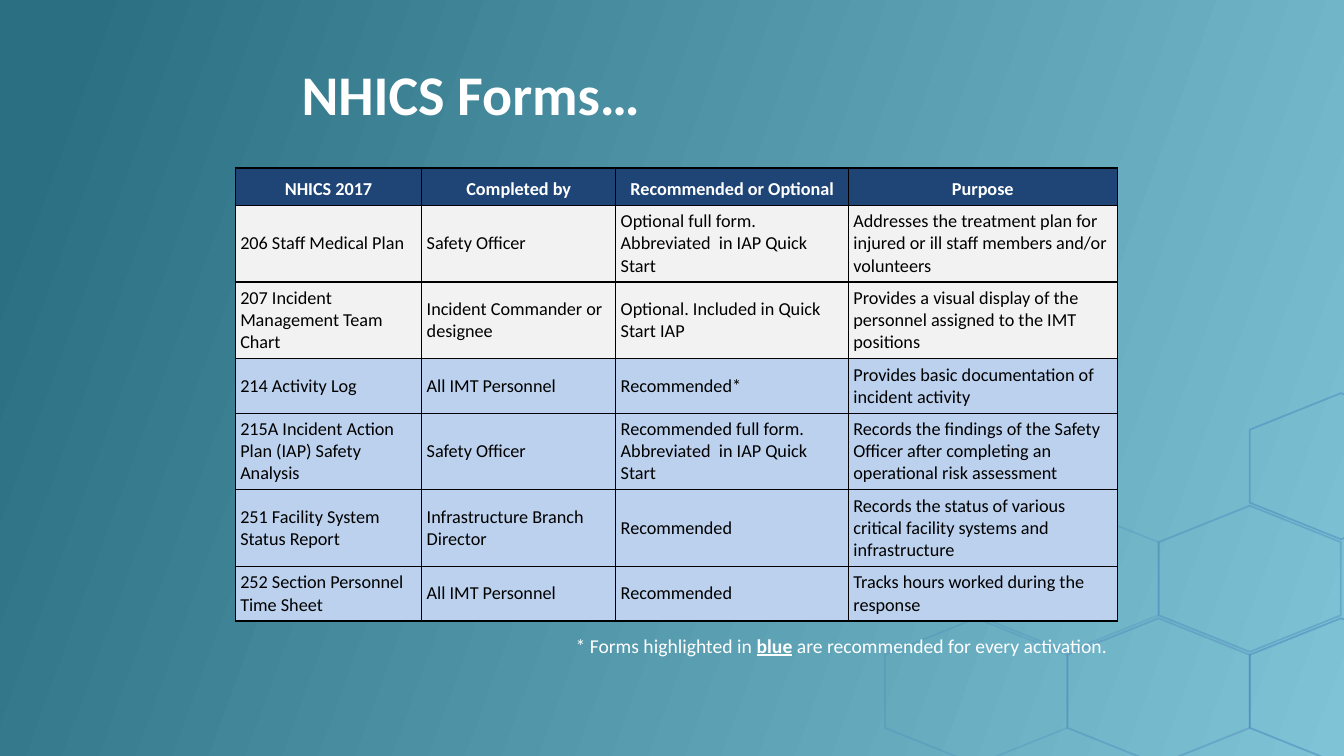
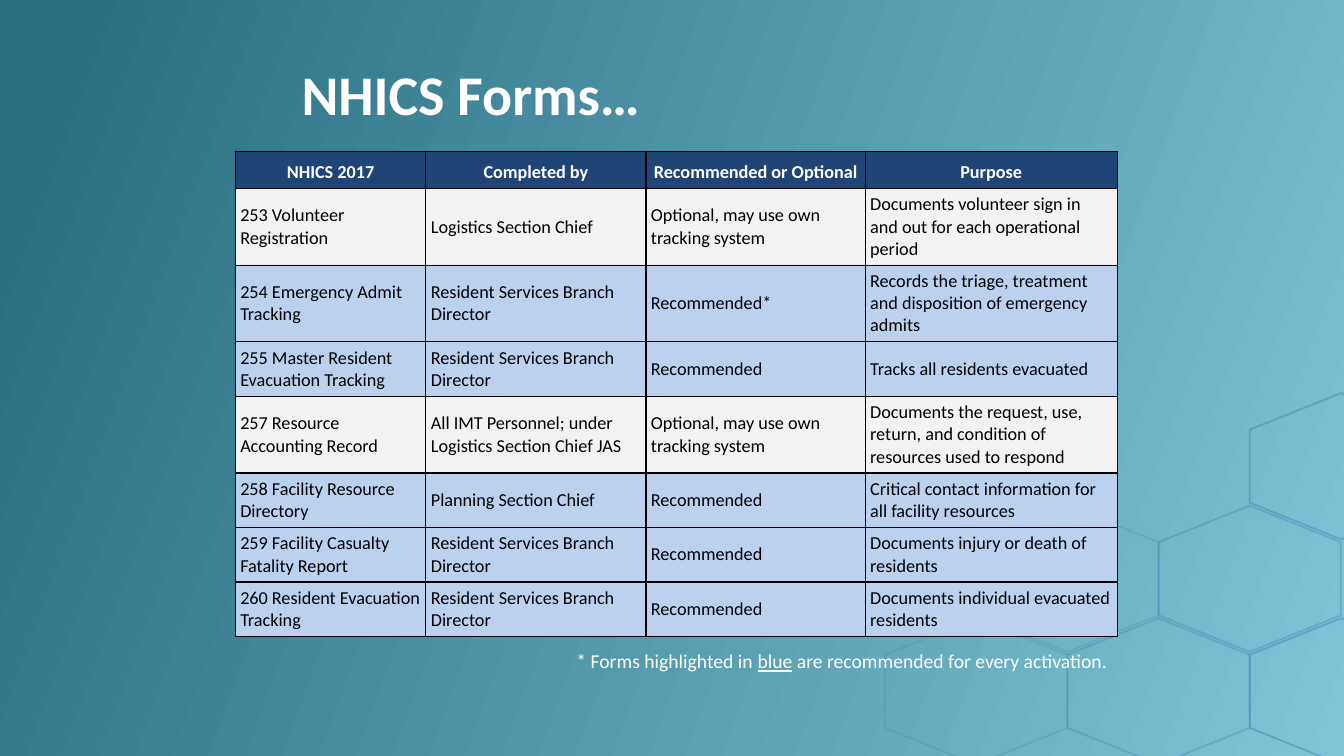
from dataclasses import dataclass
from typing import NamedTuple

import lxml.etree
import pptx
import pptx.dml.color
import pptx.enum.shapes
import pptx.enum.text
import pptx.oxml.ns
import pptx.util

GRID_COLUMNS = 160
GRID_ROWS = 90
UNIT = pptx.util.Inches(7.5) / GRID_ROWS


@dataclass(frozen=True)
class Theme:
    font: str = "Calibri"
    white: str = "FFFFFF"
    black: str = "000000"
    background_dark: str = "2A6F82"
    background_light: str = "7EC3D6"
    header: str = "1E4576"
    recommended: str = "BBD1EE"
    optional: str = "F2F2F2"
    hexagon: str = "2D68B1"
    hexagon_accent: str = "4F81BD"
    title_size: float = 40
    table_size: float = 13
    note_size: float = 14
    border_width: float = 1


THEME = Theme()


class Hexagon(NamedTuple):
    column: int
    row: int
    opacity: int
    color: str = THEME.hexagon
    line_width: float = 1.25


class Form(NamedTuple):
    name: str
    completed_by: str
    status: str
    purpose: str


@dataclass(frozen=True)
class FormsSlide:
    table_top: float
    column_widths: tuple[float, ...]
    line_counts: tuple[int, ...]
    forms: tuple[Form, ...]
    bold_blue: bool = False


TITLE = "NHICS Forms…"
TITLE_BOX = (34.7, 3.6, 117.4, 15)
TABLE_LEFT = 28
TABLE_WIDTH = 105
HEADER_HEIGHT = 4.4
LINE_HEIGHT = 2.64
CELL_MARGIN = 0.6
NOTE_LEFT, NOTE_WIDTH, NOTE_HEIGHT, NOTE_GAP = 56, 77, 4.1, 1
HEXAGON_WIDTH, HEXAGON_HEIGHT = 17.4, 21.7
HEXAGON_ORIGIN = (116.2, 82.3)
HEXAGON_STEP = (10.86, 13.4)
HEADINGS = Form("NHICS 2017", "Completed by", "Recommended or Optional", "Purpose")

HEXAGONS = (
    Hexagon(1, 1, 15),
    Hexagon(4, 2, 30),
    Hexagon(2, 0, 37, THEME.hexagon_accent, 1.3),
    Hexagon(0, 0, 15),
    Hexagon(4, 0, 32),
    Hexagon(3, 1, 25),
)

SLIDES = (
    FormsSlide(
        table_top=20,
        column_widths=(22.2, 23.1, 27.7, 32),
        line_counts=(3, 3, 2, 3, 3, 2),
        bold_blue=True,
        forms=(
            Form("206 Staff Medical Plan", "Safety Officer",
                 "Optional full form. Abbreviated  in IAP Quick Start",
                 "Addresses the treatment plan for injured or ill staff members and/or volunteers"),
            Form("207 Incident Management Team Chart", "Incident Commander or designee",
                 "Optional. Included in Quick Start IAP",
                 "Provides a visual display of the personnel assigned to the IMT positions"),
            Form("214 Activity Log", "All IMT Personnel", "Recommended*",
                 "Provides basic documentation of incident activity"),
            Form("215A Incident Action Plan (IAP) Safety Analysis", "Safety Officer",
                 "Recommended full form. Abbreviated  in IAP Quick Start",
                 "Records the findings of the Safety Officer after completing an "
                 "operational risk assessment"),
            Form("251 Facility System Status Report", "Infrastructure Branch Director",
                 "Recommended",
                 "Records the status of various critical facility systems and infrastructure"),
            Form("252 Section Personnel Time Sheet", "All IMT Personnel", "Recommended",
                 "Tracks hours worked during the response"),
        ),
    ),
    FormsSlide(
        table_top=18,
        column_widths=(22.7, 26.2, 26.1, 30),
        line_counts=(3, 3, 2, 3, 2, 2, 2),
        forms=(
            Form("253 Volunteer Registration", "Logistics Section Chief",
                 "Optional, may use own tracking system",
                 "Documents volunteer sign in and out for each operational period"),
            Form("254 Emergency Admit Tracking", "Resident Services Branch Director",
                 "Recommended*",
                 "Records the triage, treatment and disposition of emergency admits"),
            Form("255 Master Resident Evacuation Tracking", "Resident Services Branch Director",
                 "Recommended", "Tracks all residents evacuated"),
            Form("257 Resource Accounting Record",
                 "All IMT Personnel; under Logistics Section Chief JAS",
                 "Optional, may use own tracking system",
                 "Documents the request, use, return, and condition of resources used to respond"),
            Form("258 Facility Resource Directory", "Planning Section Chief", "Recommended",
                 "Critical contact information for all facility resources"),
            Form("259 Facility Casualty Fatality Report", "Resident Services Branch Director",
                 "Recommended", "Documents injury or death of residents"),
            Form("260 Resident Evacuation Tracking", "Resident Services Branch Director",
                 "Recommended", "Documents individual evacuated residents"),
        ),
    ),
)


def grid(units: float) -> pptx.util.Emu:
    return pptx.util.Emu(round(units * UNIT))


def rgb(color: str) -> pptx.dml.color.RGBColor:
    return pptx.dml.color.RGBColor.from_string(color)


def add_text(paragraph, text: str, *, size: float, color: str = THEME.white,
             bold: bool = False, underline: bool = False, align: str = "LEFT") -> None:
    paragraph.alignment = pptx.enum.text.PP_ALIGN[align]
    run = paragraph.add_run()
    run.text = text
    run.font.name = THEME.font
    run.font.size = pptx.util.Pt(size)
    run.font.color.rgb = rgb(color)
    run.font.bold = bold
    run.font.underline = underline


def prepare_layout(layout) -> None:
    fill = layout.background.fill
    fill.gradient()
    fill.gradient_angle = 340
    stops = ((0.05, THEME.background_dark), (1, THEME.background_light))
    for stop, (position, color) in zip(fill.gradient_stops, stops):
        stop.position = position
        stop.color.rgb = rgb(color)
    for placeholder in list(layout.placeholders):
        if placeholder.placeholder_format.type == pptx.enum.shapes.PP_PLACEHOLDER.TITLE:
            placeholder.left, placeholder.top, placeholder.width, placeholder.height = map(
                grid, TITLE_BOX)
        else:
            layout.shapes.element.remove(placeholder.element)


def draw_hexagon(slide, hexagon: Hexagon):
    center_x = HEXAGON_ORIGIN[0] + hexagon.column * HEXAGON_STEP[0]
    center_y = HEXAGON_ORIGIN[1] - hexagon.row * HEXAGON_STEP[1]
    shape = slide.shapes.add_shape(
        pptx.enum.shapes.MSO_SHAPE.HEXAGON,
        grid(center_x - HEXAGON_WIDTH / 2), grid(center_y - HEXAGON_HEIGHT / 2),
        grid(HEXAGON_WIDTH), grid(HEXAGON_HEIGHT))
    shape.rotation = 90
    shape.shadow.inherit = False
    shape.fill.background()
    shape.line.color.rgb = rgb(hexagon.color)
    shape.line.width = pptx.util.Pt(hexagon.line_width)
    for color in shape.element.spPr.iter(pptx.oxml.ns.qn("a:srgbClr")):
        lxml.etree.SubElement(color, pptx.oxml.ns.qn("a:alpha"), val=str(hexagon.opacity * 1000))
    return shape


def move_hexagons_to_layout(slide, layout) -> None:
    shapes = [draw_hexagon(slide, hexagon) for hexagon in HEXAGONS]
    for shape in shapes:
        layout.shapes.element.append(shape.element)


def draw_title(slide) -> None:
    frame = slide.shapes.title.text_frame
    frame.auto_size = pptx.enum.text.MSO_AUTO_SIZE.NONE
    frame.vertical_anchor = pptx.enum.text.MSO_ANCHOR.MIDDLE
    add_text(frame.paragraphs[0], TITLE, size=THEME.title_size, bold=True)


def fill_row(row, values: Form, *, is_header: bool) -> None:
    if is_header:
        color = THEME.header
    elif values.status.startswith("Recommended"):
        color = THEME.recommended
    else:
        color = THEME.optional
    for cell, value in zip(row.cells, values):
        cell.fill.solid()
        cell.fill.fore_color.rgb = rgb(color)
        cell.vertical_anchor = pptx.enum.text.MSO_ANCHOR.MIDDLE
        cell.margin_left = cell.margin_right = cell.margin_bottom = grid(CELL_MARGIN)
        cell.margin_top = grid(CELL_MARGIN * (2 if is_header else 1))
        add_text(cell.text_frame.paragraphs[0], value, size=THEME.table_size, bold=is_header,
                 color=THEME.white if is_header else THEME.black,
                 align="CENTER" if is_header else "LEFT")


def draw_borders(table_frame) -> None:
    qn = pptx.oxml.ns.qn
    for properties in table_frame.element.iter(qn("a:tcPr")):
        for position, side in enumerate(("a:lnL", "a:lnR", "a:lnT", "a:lnB")):
            line = lxml.etree.Element(qn(side), w=str(pptx.util.Pt(THEME.border_width)))
            fill = lxml.etree.SubElement(line, qn("a:solidFill"))
            lxml.etree.SubElement(fill, qn("a:srgbClr"), val=THEME.black)
            properties.insert(position, line)


def draw_table(slide, content: FormsSlide) -> float:
    heights = [HEADER_HEIGHT]
    heights += [count * LINE_HEIGHT + 2 * CELL_MARGIN for count in content.line_counts]
    table_frame = slide.shapes.add_table(
        len(heights), len(content.column_widths), grid(TABLE_LEFT), grid(content.table_top),
        grid(TABLE_WIDTH), grid(sum(heights)))
    table = table_frame.table
    table.horz_banding = False
    for column, width in zip(table.columns, content.column_widths):
        column.width = grid(width)
    rows = zip(table.rows, heights, (HEADINGS, *content.forms))
    for row, height, values in rows:
        row.height = grid(height)
        fill_row(row, values, is_header=values is HEADINGS)
    draw_borders(table_frame)
    return content.table_top + sum(heights)


def draw_note(slide, top: float, *, bold_blue: bool) -> None:
    box = slide.shapes.add_textbox(grid(NOTE_LEFT), grid(top), grid(NOTE_WIDTH), grid(NOTE_HEIGHT))
    box.text_frame.word_wrap = True
    paragraph = box.text_frame.paragraphs[0]
    add_text(paragraph, "* Forms highlighted in ", size=THEME.note_size, align="RIGHT")
    add_text(paragraph, "blue", size=THEME.note_size, align="RIGHT",
             bold=bold_blue, underline=True)
    add_text(paragraph, " are recommended for every activation.",
             size=THEME.note_size, align="RIGHT")


def main() -> None:
    presentation = pptx.Presentation()
    presentation.slide_width = grid(GRID_COLUMNS)
    presentation.slide_height = grid(GRID_ROWS)
    layout = presentation.slide_layouts.get_by_name("Title Only")
    prepare_layout(layout)
    for index, content in enumerate(SLIDES):
        slide = presentation.slides.add_slide(layout)
        if index == 0:
            move_hexagons_to_layout(slide, layout)
        draw_title(slide)
        table_bottom = draw_table(slide, content)
        draw_note(slide, table_bottom + NOTE_GAP, bold_blue=content.bold_blue)
    presentation.save("out.pptx")


if __name__ == "__main__":
    main()
